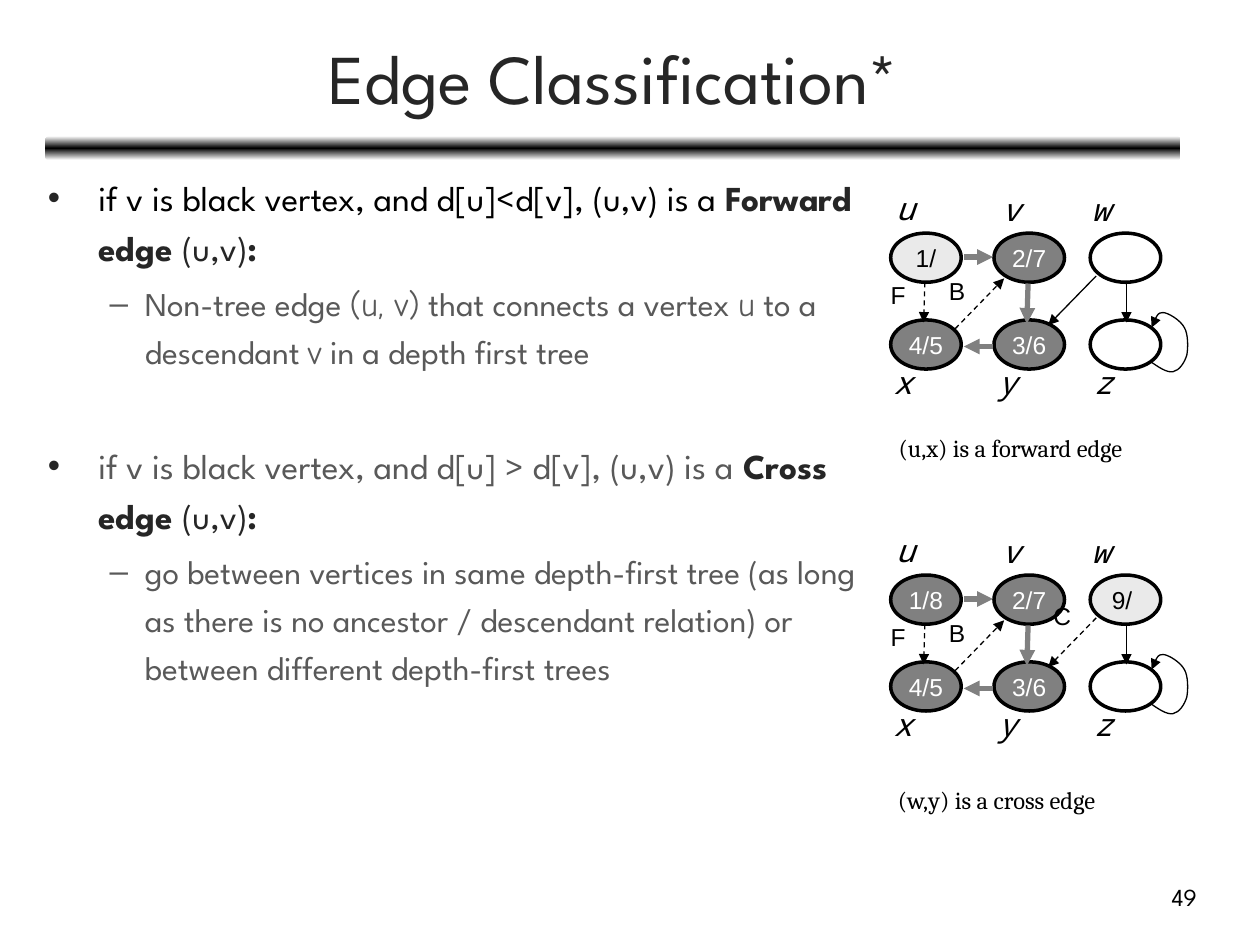
from copy import deepcopy

from lxml import etree
from pptx import Presentation
from pptx.dml import color
from pptx.enum import dml, shapes, text
from pptx.oxml import ns
from pptx.util import Pt

COLORS = {"black": "000000", "white": "FFFFFF", "ink": "262626", "soft": "595959",
          "gray": "808080", "light": "EAEAEA"}
SPARTAN, COMIC, MONO, SANS, SERIF = "League Spartan", "Comic Neue", "Noto Sans Mono", "Arial", "Cambria"

TITLE = "Edge Classification*"
PAGE = "49"
BULLETS = [
    (0, 5, [("if v is black vertex, and d[u]<d[v], (u,v) is a ", "black", SPARTAN, False),
            ("Forward edge ", "ink", SPARTAN, True),
            ("(u,v)", "ink", SPARTAN, False), (":", "ink", SPARTAN, True)]),
    (1, 4, [("Non-tree edge ", "soft", SPARTAN, False), ("(u, v)", "soft", COMIC, False),
            (" that connects a vertex ", "soft", SPARTAN, False), ("u", "soft", COMIC, False),
            (" to a descendant ", "soft", SPARTAN, False), ("v", "soft", COMIC, False),
            (" in a depth first tree", "soft", SPARTAN, False)]),
    (0, 37, [("if v is black vertex, and d[u] > d[v], (u,v) is a ", "soft", SPARTAN, False),
             ("Cross edge ", "ink", SPARTAN, True),
             ("(u,v)", "ink", SPARTAN, False), (":", "ink", SPARTAN, True)]),
    (1, 4, [("go between vertices in same depth-first tree (as long as there is no ancestor / "
             "descendant relation) or between different depth-first trees", "soft", SPARTAN, False)]),
]
LEVELS = [dict(size=20, margin=28.8, indent=-28.8, mark="•", color="ink"),
          dict(size=19, margin=55.4, indent=-20.2, mark="–", color="soft")]

NODE_COLUMNS, NODE_ROWS, NODE_SIZE = (509, 568, 623), (133.2, 182.8), (40.3, 28.1)
VERTEX_NAMES = [("u", 511.9, 108), ("v", 572.4, 108.7), ("w", 623.5, 108.7),
                ("x", 510.5, 207.4), ("y", 570.2, 207.4), ("z", 625, 207.4)]
EDGES = {"ux": (528.5, 161.3, 527.8, 184.3), "vy": (587.5, 162, 586.8, 185),
         "wz": (643.7, 161.3, 643.7, 184.3), "uv": (550.8, 146.9, 567.4, 146.9),
         "yx": (567.4, 198, 550.8, 198), "wy": (626.4, 157.7, 599, 185.8),
         "xv": (545.8, 187.9, 573.8, 159.1)}
TREE_EDGES = {"uv", "vy", "yx"}
LOOP = [(657.4, 206.6), (661.7, 209.5), (666.7, 213.1), (670.3, 212.4),
        (673.9, 211.7), (676.8, 207.4), (678.2, 203), (679, 198.7), (679, 190.8), (676.8, 187.2),
        (674.6, 182.9), (667.4, 178.6), (664.6, 178.6), (661.7, 178.6), (659.5, 182.9), (658.1, 187.2)]
EDGE_MARKS = {"B": (542.2, 157.7), "F": (509, 159.8), "C": (601.9, 148)}
GRAPHS = [
    dict(offset=0, nodes=["1/", "2/7", "", "4/5", "3/6", ""], active=0, marks="BF",
         dashed={"ux", "xv"}, caption=("(u,x) is a forward edge", 244.1, 148.3)),
    dict(offset=195.4, nodes=["1/8", "2/7", "9/ ", "4/5", "3/6", ""], active=2, marks="BFC",
         dashed={"ux", "xv", "wy"}, caption=("(w,y) is a cross edge", 445, 132.5)),
]


def rgb(name):
    return color.RGBColor.from_string(COLORS[name])


def points(*values):
    return [Pt(value) for value in values]


def style(font, size, name, tint, bold=False, italic=False):
    font.size, font.name, font.bold, font.italic = Pt(size), name, bold, italic
    font.color.rgb = rgb(tint)


def set_frame(frame, margin=0, wrap=False):
    frame.margin_left = frame.margin_right = frame.margin_top = frame.margin_bottom = Pt(margin)
    frame.word_wrap = wrap


def place(shape, left, top, width, height):
    shape.left, shape.top, shape.width, shape.height = points(left, top, width, height)


def add_label(parent, content, box, size, name, align=text.PP_ALIGN.LEFT, margin=0, wrap=False, italic=False):
    frame = parent.add_textbox(*points(*box)).text_frame
    set_frame(frame, margin, wrap)
    paragraph = frame.paragraphs[0]
    paragraph.text, paragraph.alignment = content, align
    style(paragraph.font, size, name, "black", italic=italic)


def add_arrowhead(shape):
    etree.SubElement(shape.line._get_or_add_ln(), ns.qn("a:tailEnd"), type="triangle")


def add_edge(parent, start_x, start_y, end_x, end_y, tree, dashed):
    edge = parent.add_connector(shapes.MSO_CONNECTOR.STRAIGHT, *points(start_x, start_y, end_x, end_y))
    edge.line.width = Pt(3 if tree else 0.75)
    edge.line.color.rgb = rgb("gray" if tree else "black")
    if dashed:
        edge.line.dash_style = dml.MSO_LINE.DASH
    add_arrowhead(edge)
    etree.SubElement(edge._element.spPr, ns.qn("a:effectLst"))


def add_node(parent, label, left, top, active):
    node = parent.add_shape(shapes.MSO_SHAPE.OVAL, *points(left, top, *NODE_SIZE))
    node.shadow.inherit = False
    node.line.width = Pt(2)
    node.line.color.rgb = rgb("black")
    if not label:
        node.fill.background()
        return
    node.fill.solid()
    node.fill.fore_color.rgb = rgb("light" if active else "gray")
    set_frame(node.text_frame)
    node.text_frame.vertical_anchor = text.MSO_ANCHOR.MIDDLE
    paragraph = node.text_frame.paragraphs[0]
    paragraph.text, paragraph.alignment = label, text.PP_ALIGN.CENTER
    style(paragraph.font, 14, SANS, "black" if active else "white")


def add_loop(parent, offset):
    start, *rest = [points(x, y + offset) for x, y in LOOP]
    builder = parent.build_freeform(*start)
    builder.add_line_segments(rest, close=False)
    loop = builder.convert_to_shape()
    segments = list(loop._element.iter(ns.qn("a:lnTo")))
    outline = segments[0].getparent()
    for first in range(0, len(segments), 3):
        curve = etree.SubElement(outline, ns.qn("a:cubicBezTo"))
        for segment in segments[first:first + 3]:
            curve.append(segment[0])
            outline.remove(segment)
    loop.shadow.inherit = False
    loop.fill.background()
    loop.line.width = Pt(0.75)
    loop.line.color.rgb = rgb("black")
    add_arrowhead(loop)


def add_graph(slide, graph):
    parent, offset = slide.shapes.add_group_shape().shapes, graph["offset"]
    for index, label in enumerate(graph["nodes"]):
        row, column = divmod(index, len(NODE_COLUMNS))
        add_node(parent, label, NODE_COLUMNS[column], NODE_ROWS[row] + offset, index == graph["active"])
    for name, left, top in VERTEX_NAMES:
        add_label(parent, name, (left, top + offset, 10.4, 20.2), 18, MONO, italic=True)
    for name, (start_x, start_y, end_x, end_y) in EDGES.items():
        add_edge(parent, start_x, start_y + offset, end_x, end_y + offset,
                 name in TREE_EDGES, name in graph["dashed"])
    add_loop(parent, offset)
    for mark in graph["marks"]:
        left, top = EDGE_MARKS[mark]
        add_label(parent, mark, (left, top + offset, 10.1, 15.8), 14, SANS)
    caption, top, width = graph["caption"]
    add_label(slide.shapes, caption, (503.3, top, width, 25.9), 14, SERIF, text.PP_ALIGN.CENTER, 3.6)


def add_rule(slide):
    rule = slide.shapes.add_shape(shapes.MSO_SHAPE.ROUNDED_RECTANGLE, *points(25.9, 77.8, 648.7, 13.7))
    rule.shadow.inherit = False
    rule.line.fill.background()
    rule.fill.gradient()
    rule.fill.gradient_angle = 90
    first = rule._element.spPr.find(".//" + ns.qn("a:gs"))
    first.addnext(deepcopy(first))
    for stop, position, tint in zip(rule.fill.gradient_stops, (0, 0.5, 1), ("white", "black", "white")):
        stop.position = position
        stop.color.rgb = rgb(tint)


def fill_title(title):
    place(title, 26.6, 7.9, 648, 71.3)
    frame = title.text_frame
    set_frame(frame, wrap=True)
    frame.auto_size = text.MSO_AUTO_SIZE.NONE
    frame.vertical_anchor = text.MSO_ANCHOR.MIDDLE
    paragraph = frame.paragraphs[0]
    paragraph.text, paragraph.alignment = TITLE, text.PP_ALIGN.CENTER
    style(paragraph.font, 40, SPARTAN, "ink")


def fill_body(body):
    place(body, 27.4, 95.8, 465.1, 411.8)
    frame = body.text_frame
    set_frame(frame, wrap=True)
    frame.auto_size = text.MSO_AUTO_SIZE.NONE
    for index, (depth, space, runs) in enumerate(BULLETS):
        paragraph = frame.add_paragraph() if index else frame.paragraphs[0]
        level = LEVELS[depth]
        paragraph.level, paragraph.line_spacing, paragraph.space_before = depth, 1.2, Pt(space)
        properties = paragraph._p.get_or_add_pPr()
        properties.set("marL", str(Pt(level["margin"])))
        properties.set("indent", str(Pt(level["indent"])))
        tint = etree.SubElement(properties, ns.qn("a:buClr"))
        etree.SubElement(tint, ns.qn("a:srgbClr"), val=COLORS[level["color"]])
        etree.SubElement(properties, ns.qn("a:buChar"), char=level["mark"])
        for content, tone, name, bold in runs:
            run = paragraph.add_run()
            run.text = content
            style(run.font, level["size"], name, tone, bold)


def main():
    presentation = Presentation()
    presentation.slide_width, presentation.slide_height = points(720, 540)
    slide = presentation.slides.add_slide(presentation.slide_layouts[1])
    add_rule(slide)
    fill_title(slide.shapes.title)
    fill_body(slide.placeholders[1])
    for graph in GRAPHS:
        add_graph(slide, graph)
    add_label(slide.shapes, PAGE, (516.2, 504, 167.8, 17.3), 14, SPARTAN, text.PP_ALIGN.RIGHT, wrap=True)
    presentation.save("out.pptx")


if __name__ == "__main__":
    main()
